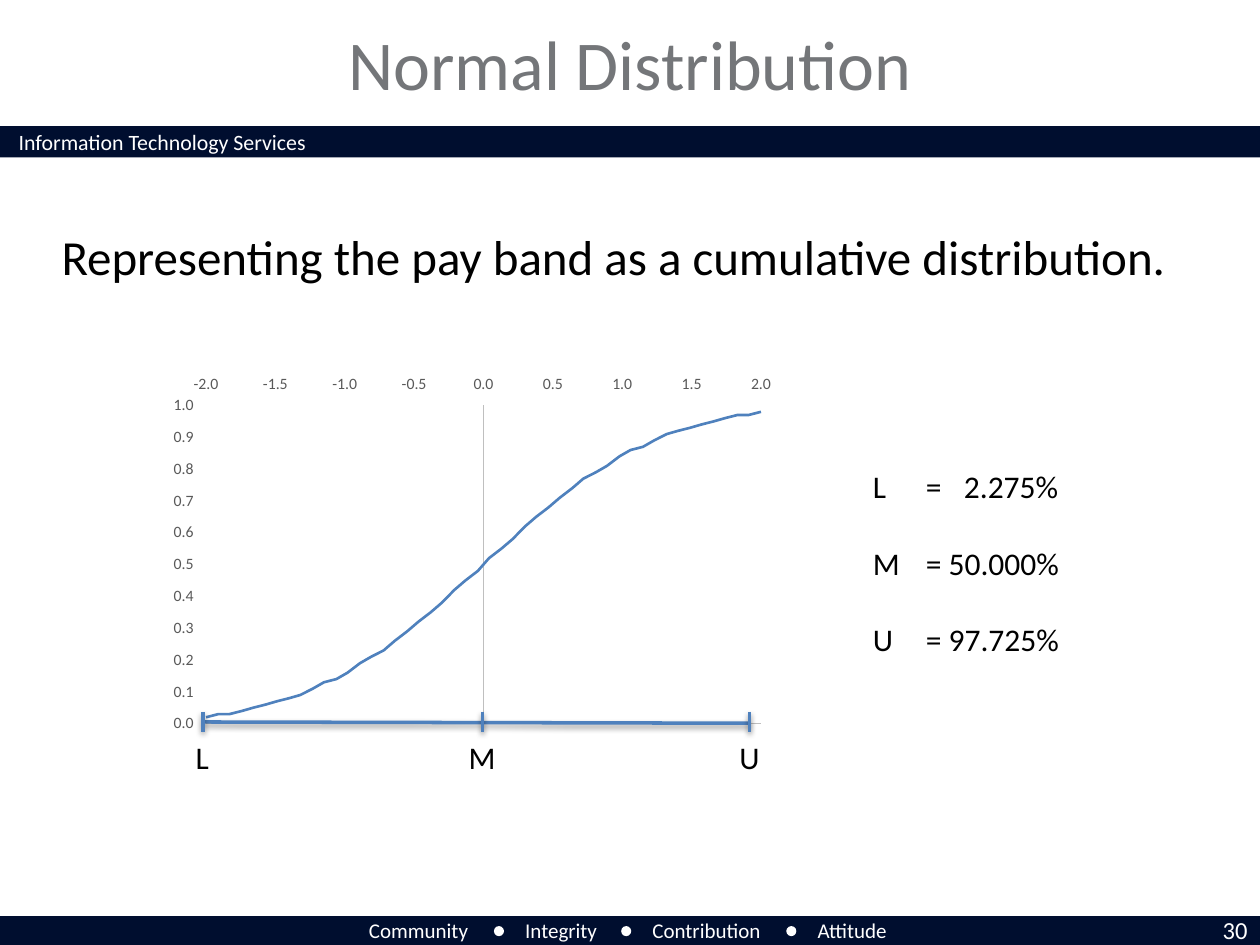
from math import erf, sqrt

from lxml.etree import SubElement
from pptx import Presentation
from pptx.chart.data import XyChartData
from pptx.dml.color import RGBColor
from pptx.enum.chart import XL_CHART_TYPE as ChartType
from pptx.enum.chart import XL_TICK_LABEL_POSITION as LabelPosition
from pptx.enum.chart import XL_TICK_MARK as TickMark
from pptx.enum.shapes import MSO_CONNECTOR as Connector
from pptx.enum.shapes import MSO_SHAPE as Shape
from pptx.enum.text import MSO_ANCHOR as Anchor
from pptx.enum.text import PP_ALIGN as Align
from pptx.oxml import parse_xml
from pptx.oxml.ns import nsdecls, qn
from pptx.util import Inches, Pt

FONT = "Calibri"
NAVY, WHITE, BLACK, BLUE = "000E2F", "FFFFFF", "000000", "4F81BD"
TITLE_GREY, AXIS_GREY, LABEL_GREY = "747679", "BFBFBF", "595959"
POINT_COUNT = 48
PLOT_LAYOUT = {"x": 0.087, "y": 0.133, "w": 0.881, "h": 0.842}


def color(hex_string):
    """Turn a hex string into a color."""
    return RGBColor.from_string(hex_string)


def set_font(font, size, hex_color):
    """Give a font its name, size and color."""
    font.name = FONT
    font.size = Pt(size)
    font.color.rgb = color(hex_color)


def add_text(slide, box, lines, size, hex_color=BLACK, align=Align.LEFT,
             wrap=True, gap=0, anchor=Anchor.TOP):
    """Add a text box with one paragraph per line."""
    frame = slide.shapes.add_textbox(*map(Inches, box)).text_frame
    frame.word_wrap = wrap
    frame.vertical_anchor = anchor
    for index, line in enumerate(lines):
        paragraph = frame.add_paragraph() if index else frame.paragraphs[0]
        paragraph.alignment = align
        if index and gap:
            paragraph.space_before = Pt(gap)
        run = paragraph.add_run()
        run.text = line
        set_font(run.font, size, hex_color)
    return frame


def add_right_tab(paragraph, position):
    """Put a right-aligned tab stop in a paragraph."""
    tabs = SubElement(paragraph._p.get_or_add_pPr(), qn("a:tabLst"))
    SubElement(tabs, qn("a:tab"), pos=str(Inches(position)), algn="r")


def add_filled_shape(slide, kind, box, hex_color):
    """Add a plain shape without an outline."""
    shape = slide.shapes.add_shape(kind, *map(Inches, box))
    shape.shadow.inherit = False
    shape.fill.solid()
    shape.fill.fore_color.rgb = color(hex_color)
    shape.line.fill.background()


def add_line(slide, start, end):
    """Add a blue line with a soft shadow below it."""
    line = slide.shapes.add_connector(
        Connector.STRAIGHT, *map(Inches, (*start, *end)))
    line.line.color.rgb = color(BLUE)
    line.line.width = Pt(2)
    line._element.spPr.append(parse_xml(
        f'<a:effectLst {nsdecls("a")}><a:outerShdw blurRad="{Pt(3.1)}" '
        f'dist="{Pt(1.6)}" dir="5400000" rotWithShape="0">'
        '<a:srgbClr val="000000"><a:alpha val="38000"/></a:srgbClr>'
        '</a:outerShdw></a:effectLst>'))


def style_axis(axis, low, high, step, label_position):
    """Give a chart axis its scale, labels and line."""
    axis.minimum_scale, axis.maximum_scale = low, high
    axis.major_unit = step
    axis.has_major_gridlines = False
    axis.major_tick_mark = axis.minor_tick_mark = TickMark.NONE
    axis.tick_label_position = label_position
    axis.tick_labels.number_format = "0.0"
    axis.tick_labels.number_format_is_linked = False
    set_font(axis.tick_labels.font, 9, LABEL_GREY)
    axis.format.line.color.rgb = color(AXIS_GREY)
    axis.format.line.width = Pt(0.75)


def set_plot_layout(chart):
    """Fix the inner plot area within the chart."""
    plot_area = chart._chartSpace.chart.plotArea
    for layout in plot_area.findall(qn("c:layout")):
        plot_area.remove(layout)
    modes = "".join(f'<c:{key}Mode val="edge"/>' for key in "xy")
    sizes = "".join(f'<c:{key} val="{value}"/>'
                    for key, value in PLOT_LAYOUT.items())
    plot_area.insert(0, parse_xml(
        f'<c:layout {nsdecls("c")}><c:manualLayout>'
        f'<c:layoutTarget val="inner"/>{modes}{sizes}'
        '</c:manualLayout></c:layout>'))


def add_distribution_chart(slide):
    """Add the cumulative normal curve from -2 to 2."""
    data = XyChartData()
    points = data.add_series("Series 1")
    for index in range(POINT_COUNT):
        deviation = -2 + 4 * index / (POINT_COUNT - 1)
        share = (1 + erf(deviation / sqrt(2))) / 2
        points.add_data_point(round(deviation, 2), round(share, 2))
    chart = slide.shapes.add_chart(
        ChartType.XY_SCATTER_SMOOTH_NO_MARKERS,
        *map(Inches, (1.2, 2.82, 5, 3)), data).chart
    set_font(chart.font, 10, BLACK)
    chart.has_legend = chart.has_title = False
    chart.plots[0].vary_by_categories = False
    series = chart.plots[0].series[0]
    series.smooth = True
    series.format.line.color.rgb = color(BLUE)
    series.format.line.width = Pt(1.5)
    style_axis(chart.category_axis, -2, 2, 0.5, LabelPosition.HIGH)
    style_axis(chart.value_axis, 0, 1, 0.1, LabelPosition.LOW)
    set_plot_layout(chart)


def add_frame(slide):
    """Add the bars, the footer words and the page number."""
    for top in (1, 7.27):
        add_filled_shape(slide, Shape.RECTANGLE, (0, top, 10, 0.25), NAVY)
    add_text(slide, (0.05, 0.97, 3.4, 0.32),
             ["Information Technology Services"], 12.5, WHITE)
    for word, left, width in (("Community", 2.83, 1), ("Integrity", 4.07, 0.8),
                              ("Contribution", 5.08, 1.1),
                              ("Attitude", 6.39, 0.78)):
        add_text(slide, (left, 7.23, width, 0.3), [word], 12, WHITE, wrap=False)
    for left in (3.92, 4.93, 6.24):
        add_filled_shape(slide, Shape.OVAL, (left, 7.35, 0.08, 0.08), WHITE)
    add_text(slide, (9.24, 7.21, 0.76, 0.34), ["30"], 14, WHITE, Align.RIGHT)


def add_pay_band(slide):
    """Add the pay band line with its three marks."""
    add_line(slide, (1.61, 5.73), (5.95, 5.74))
    for name, center, width in (("L", 1.61, 0.31), ("M", 3.83, 0.42),
                                ("U", 5.95, 0.36)):
        add_line(slide, (center, 5.65), (center, 5.81))
        add_text(slide, (center - width / 2, 5.81, width, 0.4), [name], 18,
                 wrap=False)


def add_percentages(slide):
    """Add the list of shares at the three marks."""
    add_text(slide, (6.83, 3.66, 0.42, 1.62), ["L", "M", "U"], 18,
             wrap=False, gap=22)
    shares = add_text(slide, (7.25, 3.66, 1.32, 1.62),
                      ["=\t2.275%", "= 50.000%", "= 97.725%"], 18, gap=22)
    add_right_tab(shares.paragraphs[0], 1.05)


def main():
    """Build the slide and save it."""
    presentation = Presentation()
    presentation.slide_width, presentation.slide_height = Inches(10), Inches(7.5)
    slide = presentation.slides.add_slide(presentation.slide_layouts[6])
    add_frame(slide)
    add_text(slide, (1, 0.1, 8, 0.8), ["Normal Distribution"], 40, TITLE_GREY,
             Align.CENTER, anchor=Anchor.MIDDLE)
    add_text(slide, (0.39, 1.75, 9.13, 0.57),
             ["Representing the pay band as a cumulative distribution."], 28)
    add_distribution_chart(slide)
    add_pay_band(slide)
    add_percentages(slide)
    presentation.save("out.pptx")


if __name__ == "__main__":
    main()
